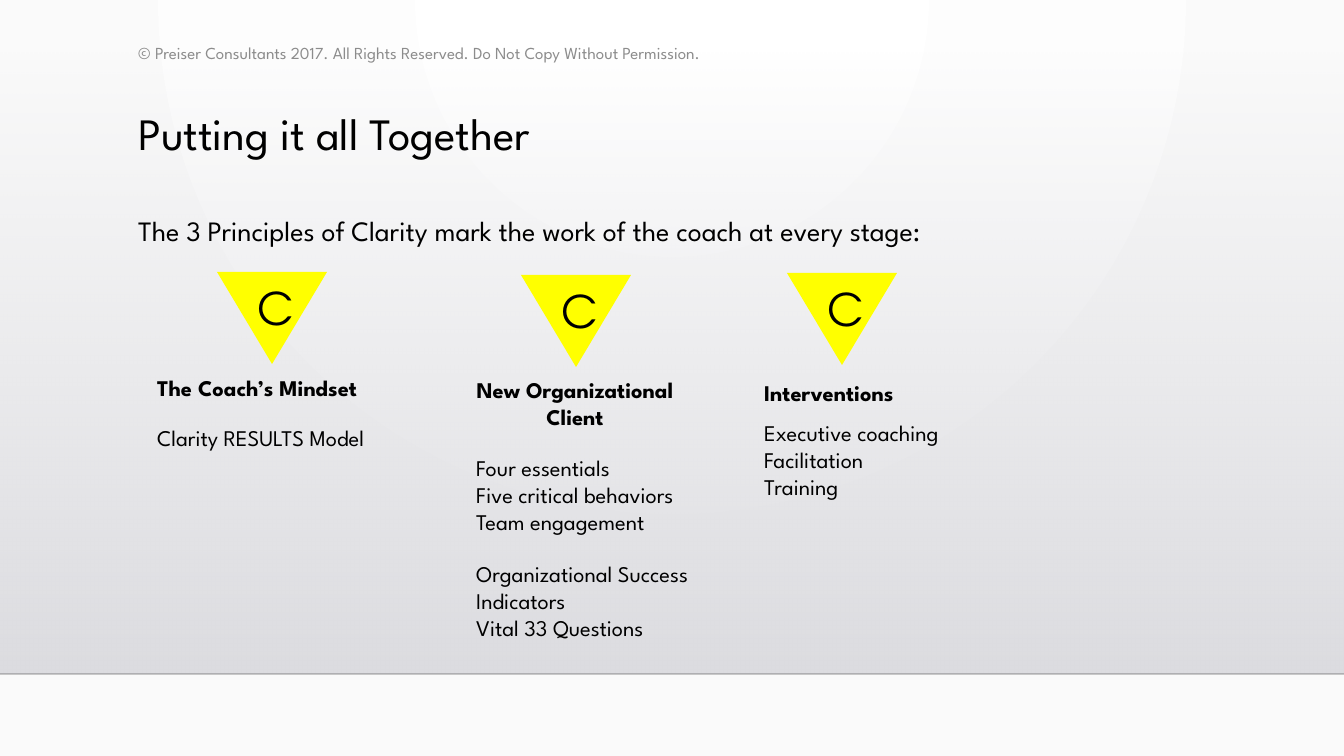
from lxml import etree
from pptx import Presentation, util as u
from pptx.dml.color import RGBColor
from pptx.enum import shapes, text
from pptx.oxml import ns, parse_xml

PX = 9144000 / 1344
BLACK = RGBColor(0x00, 0x00, 0x00)
GREY = RGBColor(0x8C, 0x8C, 0x8C)
YELLOW = RGBColor(0xFF, 0xFF, 0x00)
SPARTAN = "League Spartan"


def set_gradient(owner, start, end, start_alpha, direction):
    """Replace the solid fill of a slide or shape with a two-stop gradient."""
    solid = owner.element.find(".//" + ns.qn("a:solidFill"))
    gradient = parse_xml(
        f'<a:gradFill {ns.nsdecls("a")} rotWithShape="1"><a:gsLst>'
        f'<a:gs pos="0"><a:srgbClr val="{start}"><a:alpha val="{start_alpha}"/></a:srgbClr></a:gs>'
        f'<a:gs pos="100000"><a:srgbClr val="{end}"/></a:gs>'
        f'</a:gsLst>{direction}</a:gradFill>')
    solid.getparent().replace(solid, gradient)


def add_text(left, top, width, height, lines, para_format=None, **font):
    box = page.shapes.add_textbox(*[round(v * PX) for v in (left, top, width, height)])
    frame = box.text_frame
    frame.word_wrap = True
    for i, line in enumerate(lines):
        para = frame.paragraphs[0] if i == 0 else frame.add_paragraph()
        for name, value in (para_format or {}).items():
            setattr(para, name, value)
        span = para.add_run()
        span.text = line
        span.font.color.rgb = font.get("color", BLACK)
        span.font.size = u.Pt(font.get("size", 12))
        span.font.name = font.get("name", SPARTAN)
        span.font.bold = font.get("bold", False)
    return box


deck = Presentation()
deck.slide_width, deck.slide_height = round(1344 * PX), round(756 * PX)
page = deck.slides.add_slide(deck.slide_layouts[6])

# Backdrop: soft radial glow, shaded panel and floor line
page.background.fill.solid()
set_gradient(page, "FFFFFF", "FAFAFA", 100000,
             '<a:path path="circle"><a:fillToRect l="43000" t="0" r="43000" b="100000"/></a:path>')

panel = page.shapes.add_shape(shapes.MSO_SHAPE.RECTANGLE, 0, round(52 * PX),
                              deck.slide_width, round(622 * PX))
panel.shadow.inherit = False
panel.line.fill.background()
panel.fill.solid()
set_gradient(panel, "DCDCE0", "DEDEE2", 0, '<a:lin ang="5400000" scaled="0"/>')

floor_y = round(674 * PX)
floor = page.shapes.add_connector(shapes.MSO_CONNECTOR.STRAIGHT, 0, floor_y,
                                  deck.slide_width, floor_y)
floor.line.width = u.Pt(1)
floor.line.color.rgb = BLACK
color = floor.element.find(".//" + ns.qn("a:srgbClr"))
etree.SubElement(color, ns.qn("a:alpha")).set("val", "20000")
etree.SubElement(floor.element.spPr, ns.qn("a:effectLst"))

# Heading
notice = add_text(125, 36, 687, 34, [
    "© Preiser Consultants 2017. All Rights Reserved. Do Not Copy Without Permission."],
    size=9, color=GREY)
notice.text_frame.vertical_anchor = text.MSO_ANCHOR.MIDDLE
add_text(125, 105, 1059, 116, ["Putting it all Together"], {"line_spacing": 0.9}, size=24)
add_text(125, 200, 1059, 73,
         ["The 3 Principles of Clarity mark the work of the coach at every stage:"],
         {"line_spacing": 1.2}, size=15)

# Clarity triangles
for left, top in [(217, 272), (521, 275), (787, 273)]:
    triangle = page.shapes.add_shape(shapes.MSO_SHAPE.ISOSCELES_TRIANGLE,
                                     *[round(v * PX) for v in (left, top, 110, 92)])
    triangle.rotation = 180
    triangle.shadow.inherit = False
    triangle.fill.solid()
    triangle.fill.fore_color.rgb = YELLOW
    triangle.line.fill.background()
    add_text(left + 27, top + 2, 73, 59, ["C"], size=24, name="TeX Gyre Adventor")

# Stage headings
CENTERED = {"alignment": text.PP_ALIGN.CENTER}
for left, top, height, lines, para_format in [
    (144, 368, 40, ["The Coach’s Mindset"], None),
    (431, 370, 67, ["New Organizational", "Client"], CENTERED),
    (751, 373, 40, ["Interventions"], None),
]:
    add_text(left, top, 288, height, lines, para_format, bold=True)

# Stage details
for left, top, height, lines in [
    (144, 418, 40, ["Clarity RESULTS Model"]),
    (463, 448, 95, ["Four essentials", "Five critical behaviors", "Team engagement"]),
    (463, 554, 95, ["Organizational Success Indicators", "Vital 33 Questions"]),
    (751, 413, 95, ["Executive coaching", "Facilitation", "Training"]),
]:
    add_text(left, top, 288, height, lines)

deck.save("out.pptx")
